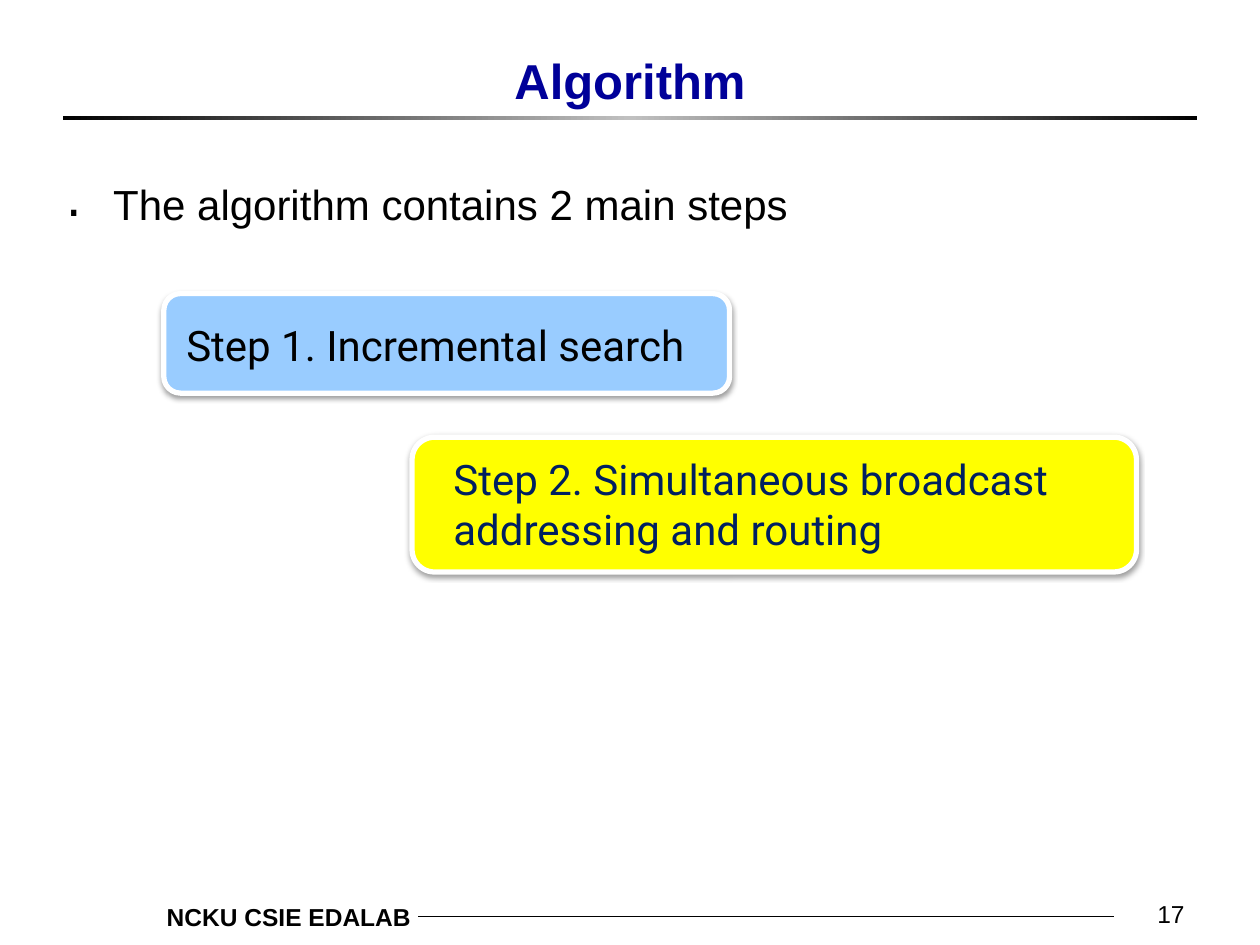
from pptx import Presentation
from pptx.util import Inches, Pt
from pptx.dml.color import RGBColor as RGB
from pptx.enum.shapes import MSO_SHAPE as Shape, MSO_CONNECTOR as Conn
from pptx.enum.text import PP_ALIGN as Align, MSO_ANCHOR as Anchor, MSO_AUTO_SIZE as Fit
from pptx.oxml import parse_xml
from pptx.oxml.ns import nsdecls

BLACK = RGB(0, 0, 0)
WHITE = RGB(255, 255, 255)
GRAY = RGB(192, 192, 192)
BLUE = RGB(0, 0, 153)
NAVY = RGB(0, 32, 96)
SKY = RGB(153, 204, 255)
GOLD = RGB(255, 255, 0)

COLS, ROWS = 100, 75
CELL = 0.1


def unit(*cells):
    return [Inches(cell * CELL) for cell in cells]


def inset(box, left, top, wide, high):
    return box[0] + left, box[1] + top, wide, high


def node(tag, body="", attrs=""):
    return parse_xml(f"<a:{tag} {nsdecls('a')} {attrs}>{body}</a:{tag}>")


def add_text(slide, box, text, size=24, font="Arial", color=BLACK, bold=False,
             align=Align.LEFT, anchor=Anchor.TOP, grow=False, mark=None):
    frame = slide.shapes.add_textbox(*unit(*box)).text_frame
    frame.word_wrap = True
    frame.vertical_anchor = anchor
    frame.auto_size = Fit.SHAPE_TO_FIT_TEXT if grow else Fit.NONE
    para = frame.paragraphs[0]
    para.alignment = align
    if mark:
        props = para._p.get_or_add_pPr()
        hang = Inches(0.38)
        props.set("marL", str(hang))
        props.set("indent", str(-hang))
        props.append(node("buClr", f'<a:srgbClr val="{BLACK}"/>'))
        props.append(node("buSzPct", attrs='val="120000"'))
        props.append(node("buChar", attrs=f'char="{mark}"'))
    run = para.add_run()
    run.text = text
    run.font.size = Pt(size)
    run.font.name = font
    run.font.bold = bold
    run.font.color.rgb = color


def add_head(slide, box, text):
    left, top, wide, high = box
    bar = slide.shapes.add_shape(Shape.RECTANGLE, *unit(left, top + high, wide, 0.3))
    bar.shadow.inherit = False
    bar.line.fill.background()
    stops = "".join(
        f'<a:gs pos="{pos}"><a:srgbClr val="{color}"/></a:gs>'
        for pos, color in ((0, BLACK), (50000, GRAY), (100000, BLACK)))
    bar._element.spPr.insert(
        2, node("gradFill", f'<a:gsLst>{stops}</a:gsLst><a:lin ang="0" scaled="0"/>'))
    add_text(slide, inset(box, 2.5, 0, wide - 5, high), text, size=28,
             color=BLUE, bold=True, align=Align.CENTER, anchor=Anchor.BOTTOM)


def add_step(slide, box, fill, label, text, color):
    card = slide.shapes.add_shape(Shape.ROUNDED_RECTANGLE, *unit(*box))
    card.fill.solid()
    card.fill.fore_color.rgb = fill
    card.line.color.rgb = WHITE
    card.line.width = Pt(3)
    card.shadow.inherit = False
    card._element.spPr.effectLst.append(node(
        "outerShdw", f'<a:srgbClr val="{BLACK}"><a:alpha val="38000"/></a:srgbClr>',
        f'blurRad="{Pt(3.1)}" dist="{Pt(1.6)}" dir="5400000" rotWithShape="0"'))
    add_text(slide, inset(box, *label), text, font="Roboto", color=color, grow=True)


def add_body(slide, box):
    add_text(slide, box, "The algorithm contains 2 main steps", mark="․")
    add_step(slide, inset(box, 8.8, 9.6, 44.9, 7.9), SKY,
             (0.8, 1.6, 57.5, 5), "Step 1. Incremental search", BLACK)
    add_step(slide, inset(box, 28.5, 21, 57.5, 10.7), GOLD,
             (2.3, 0.8, 55.1, 9.1),
             "Step 2. Simultaneous broadcast addressing and routing", NAVY)


def add_foot(slide, box, name, page):
    left, top, wide, high = box
    mid = top + 3.5
    rule = slide.shapes.add_connector(
        Conn.STRAIGHT, *unit(left + 23.8, mid, left + 79, mid))
    rule.line.color.rgb = BLACK
    rule.line.width = Pt(0.5)
    rule._element.spPr.append(node("effectLst"))
    add_text(slide, inset(box, 0, 1.9, 24.2, 3.4), name, size=14,
             bold=True, align=Align.RIGHT, grow=True)
    add_text(slide, inset(box, wide - 20.8, 0, 20.8, high), page, size=14,
             align=Align.RIGHT, anchor=Anchor.BOTTOM)


def main():
    deck = Presentation()
    deck.slide_width, deck.slide_height = unit(COLS, ROWS)
    slide = deck.slides.add_slide(deck.slide_layouts[6])
    add_head(slide, (5, 0, COLS - 10, 9.2), "Algorithm")
    add_body(slide, (4.2, 13.7, 88.3, 27.2))
    add_foot(slide, (9.4, 69.2, 85.6, 5), "NCKU CSIE EDALAB", "17")
    deck.save("out.pptx")


if __name__ == "__main__":
    main()
